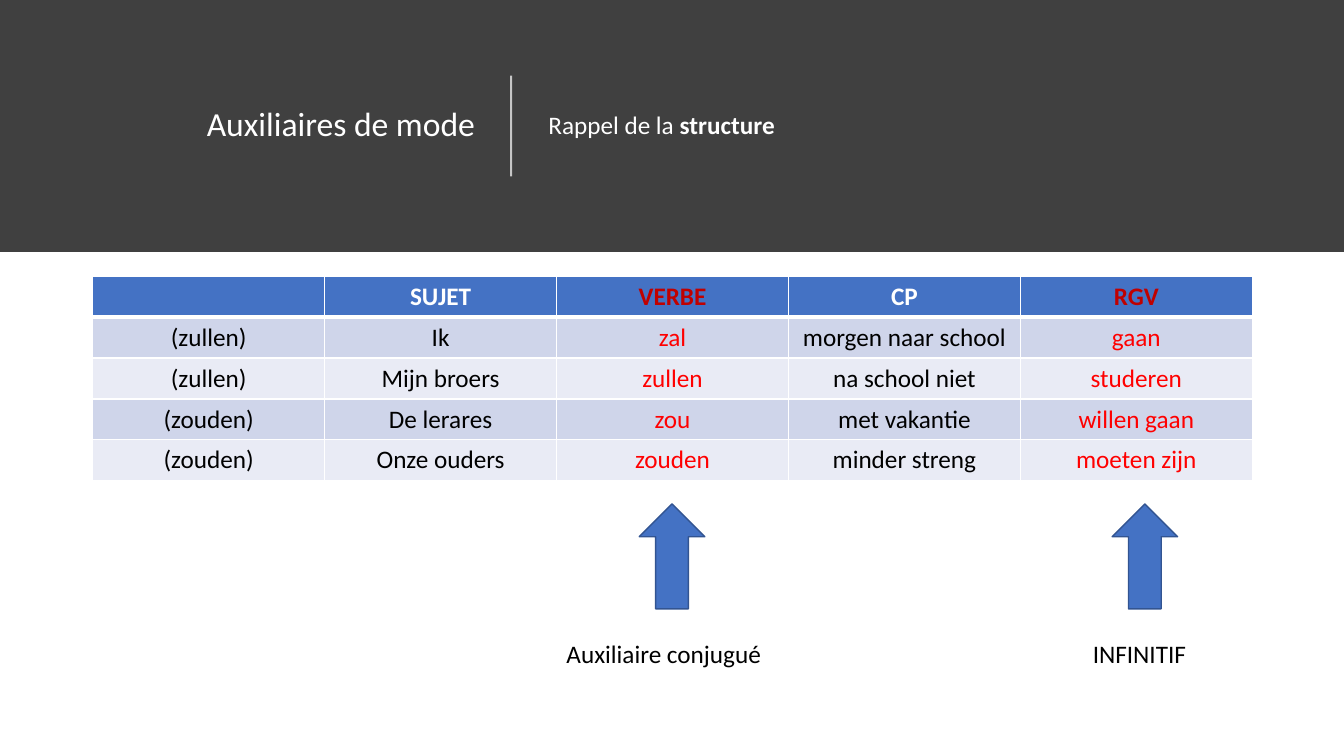
from lxml import etree
from pptx import Presentation
from pptx.dml.color import RGBColor
from pptx.enum.shapes import MSO_CONNECTOR, MSO_SHAPE
from pptx.enum.text import MSO_ANCHOR, PP_ALIGN
from pptx.oxml.ns import qn
from pptx.util import Inches, Pt

LEFT, CENTER, RIGHT = PP_ALIGN.LEFT, PP_ALIGN.CENTER, PP_ALIGN.RIGHT
TOP, MIDDLE = MSO_ANCHOR.TOP, MSO_ANCHOR.MIDDLE
BLUE, WHITE, BLACK = "4472C4", "FFFFFF", "000000"
DARK_RED, RED = "C00000", "FF0000"
BANDS = ("CFD5EA", "E9EBF5")


def color(value):
    return RGBColor.from_string(value)


def write_text(frame, *parts, size=18, fill=BLACK, bold=False, align=LEFT,
               anchor=TOP, spacing=1.0):
    frame.word_wrap = True
    frame.vertical_anchor = anchor
    para = frame.paragraphs[0]
    para.alignment = align
    para.line_spacing = spacing
    for index, part in enumerate(parts):
        span = para.add_run()
        span.text = part
        span.font.name = "Calibri"
        span.font.size = Pt(size)
        span.font.bold = bold or index > 0
        span.font.color.rgb = color(fill)


deck = Presentation()
deck.slide_width, deck.slide_height = Inches(13.33), Inches(7.5)
page = deck.slides.add_slide(deck.slide_layouts[6])

banner = page.shapes.add_shape(MSO_SHAPE.RECTANGLE, 0, 0, deck.slide_width, Inches(2.5))
banner.shadow.inherit = False
banner.fill.solid()
banner.fill.fore_color.rgb = color("404040")
banner.line.fill.background()

title = page.shapes.add_textbox(Inches(0.87), Inches(0.52), Inches(3.94), Inches(1.45))
write_text(title.text_frame, "Auxiliaires de mode", size=24, fill=WHITE,
           align=RIGHT, anchor=MIDDLE, spacing=0.9)

divider = page.shapes.add_connector(
    MSO_CONNECTOR.STRAIGHT, Inches(5.07), Inches(1.75), Inches(5.07), Inches(0.75))
divider.line.width = Pt(1.5)
divider.line.color.rgb = color(WHITE)
divider_properties = divider._element.spPr
tint = divider_properties.find(".//" + qn("a:srgbClr"))
etree.SubElement(tint, qn("a:alpha"), val="70000")
etree.SubElement(divider_properties, qn("a:effectLst"))

subtitle = page.shapes.add_textbox(Inches(5.34), Inches(0.45), Inches(7.12), Inches(1.6))
write_text(subtitle.text_frame, "Rappel de la ", "structure", fill=WHITE,
           anchor=MIDDLE, spacing=0.9)

rows = [
    ("", "SUJET", "VERBE", "CP", "RGV"),
    ("(zullen)", "Ik", "zal", "morgen naar school", "gaan"),
    ("(zullen)", "Mijn broers", "zullen", "na school niet", "studeren"),
    ("(zouden)", "De lerares", "zou", "met vakantie", "willen gaan"),
    ("(zouden)", "Onze ouders", "zouden", "minder streng", "moeten zijn"),
]
verb_columns = (2, 4)
table = page.shapes.add_table(
    len(rows), len(rows[0]), Inches(0.92), Inches(2.74), Inches(11.5), Inches(2.03)).table

for row_index, row in enumerate(rows):
    header = row_index == 0
    for column_index, text in enumerate(row):
        cell = table.cell(row_index, column_index)
        cell_properties = cell._tc.get_or_add_tcPr()
        for side in ("lnL", "lnR", "lnT", "lnB"):
            under_header = (row_index, side) in ((0, "lnB"), (1, "lnT"))
            border = etree.SubElement(cell_properties, qn("a:" + side),
                                      w=str(Pt(3 if under_header else 1)))
            border_fill = etree.SubElement(border, qn("a:solidFill"))
            etree.SubElement(border_fill, qn("a:srgbClr"), val=WHITE)
        cell.fill.solid()
        cell.fill.fore_color.rgb = color(BLUE if header else BANDS[(row_index - 1) % 2])
        if column_index in verb_columns:
            text_color = DARK_RED if header else RED
        else:
            text_color = WHITE if header else BLACK
        if text:
            write_text(cell.text_frame, text, fill=text_color, bold=header, align=CENTER)

for arrow_left, label_left, label_width, text in (
        (6.34, 5.52, 2.28, "Auxiliaire conjugué"),
        (11.03, 10.74, 1.23, "INFINITIF")):
    arrow = page.shapes.add_shape(
        MSO_SHAPE.UP_ARROW, Inches(arrow_left), Inches(5), Inches(0.65), Inches(1.04))
    arrow.shadow.inherit = False
    arrow.fill.solid()
    arrow.fill.fore_color.rgb = color(BLUE)
    arrow.line.color.rgb = color("325491")
    arrow.line.width = Pt(1)
    label = page.shapes.add_textbox(
        Inches(label_left), Inches(6.28), Inches(label_width), Inches(0.4))
    write_text(label.text_frame, text)

deck.save("out.pptx")
